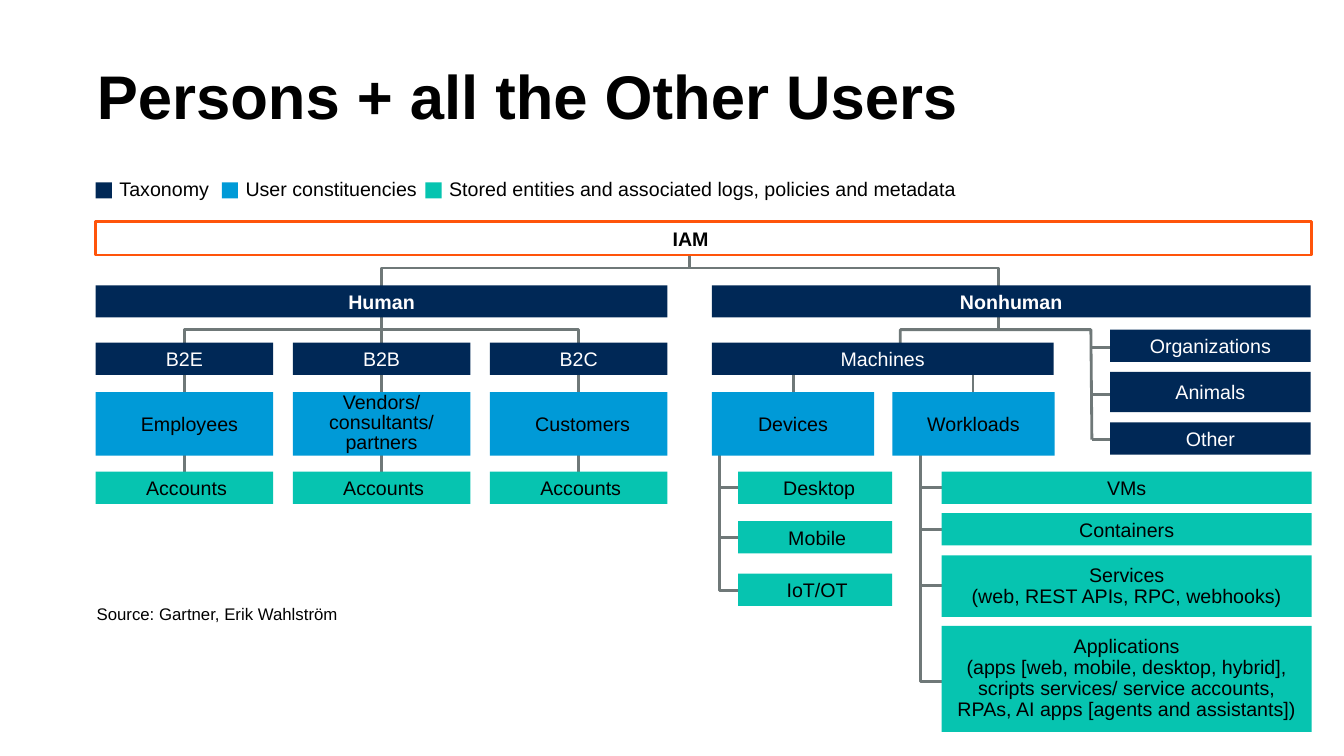
import pptx
import pptx.util
import pptx.dml.color
import pptx.enum.shapes
import pptx.enum.text
import pptx.oxml
from dataclasses import dataclass
from pptx.util import Inches


@dataclass(frozen=True)
class Theme:
    """Colours, font and type sizes of the slide."""
    taxonomy: str = "002856"
    constituency: str = "009AD7"
    stored: str = "06C4B0"
    frame: str = "FF540A"
    branch: str = "6F7878"
    dark_text: str = "000000"
    light_text: str = "FFFEFF"
    font: str = "Arial"
    title_size: int = 44
    label_size: int = 14
    source_size: int = 12
    line_width: int = 2


THEME = Theme()


def rgb(colour):
    """Turn a hex string into a colour."""
    return pptx.dml.color.RGBColor.from_string(colour)


def write(frame, words, size, colour=THEME.dark_text, bold=False, spacing=None, centred=False):
    """Write one formatted paragraph into a text frame."""
    paragraph = frame.paragraphs[0]
    paragraph.text = words
    align = pptx.enum.text.PP_ALIGN
    paragraph.alignment = align.CENTER if centred else align.LEFT
    if spacing:
        paragraph.line_spacing = spacing
    paragraph.font.name = THEME.font
    paragraph.font.size = pptx.util.Pt(size)
    paragraph.font.bold = bold
    paragraph.font.color.rgb = rgb(colour)


def style_line(line, colour):
    """Give a line its colour and the common width."""
    line.color.rgb = rgb(colour)
    line.width = pptx.util.Pt(THEME.line_width)


def add_title(slide, words):
    """Place and format the title placeholder."""
    title = slide.shapes.title
    title.left, title.top = Inches(0.86), Inches(0.26)
    title.width, title.height = Inches(10.6), Inches(1.45)
    frame = title.text_frame
    frame.auto_size = pptx.enum.text.MSO_AUTO_SIZE.NONE
    frame.vertical_anchor = pptx.enum.text.MSO_ANCHOR.MIDDLE
    write(frame, words, THEME.title_size, bold=True, spacing=0.9)


def add_block(slide, left, top, width, height, fill=None):
    """Add a plain rectangle, framed when it has no fill."""
    block = slide.shapes.add_shape(
        pptx.enum.shapes.MSO_SHAPE.RECTANGLE,
        Inches(left), Inches(top), Inches(width), Inches(height))
    block.shadow.inherit = False
    if fill:
        block.fill.solid()
        block.fill.fore_color.rgb = rgb(fill)
        block.line.fill.background()
    else:
        block.fill.background()
        style_line(block.line, THEME.frame)
    return block


def add_node(slide, words, left, top, width, height=0.32, fill=None,
             bold=False, spacing=None, nudge=0):
    """Add a labelled box, its label moved sideways by the nudge."""
    frame = add_block(slide, left, top, width, height, fill).text_frame
    frame.word_wrap = True
    frame.vertical_anchor = pptx.enum.text.MSO_ANCHOR.MIDDLE
    frame.margin_top = frame.margin_bottom = 0
    frame.margin_left = Inches(0.08 + max(2 * nudge, 0))
    frame.margin_right = Inches(0.08 + max(-2 * nudge, 0))
    colour = THEME.light_text if fill == THEME.taxonomy else THEME.dark_text
    write(frame, words, THEME.label_size, colour, bold, spacing, centred=True)


def add_text(slide, words, left, top, width, height, size, margin):
    """Add a single line of free text."""
    box = slide.shapes.add_textbox(Inches(left), Inches(top), Inches(width), Inches(height))
    frame = box.text_frame
    frame.word_wrap = False
    frame.margin_left = frame.margin_right = Inches(margin)
    frame.margin_top = frame.margin_bottom = Inches(margin / 2)
    write(frame, words, size)


def add_link(slide, x1, y1, x2, y2):
    """Add a straight branch line."""
    link = slide.shapes.add_connector(
        pptx.enum.shapes.MSO_CONNECTOR.STRAIGHT,
        Inches(x1), Inches(y1), Inches(x2), Inches(y2))
    style_line(link.line, THEME.branch)
    properties = link._element.spPr
    properties.append(pptx.oxml.parse_xml(
        '<a:effectLst xmlns:a="http://schemas.openxmlformats.org/drawingml/2006/main"/>'))


def add_bracket(slide, *points):
    """Add a bent branch line through the points."""
    corners = [(Inches(x), Inches(y)) for x, y in points]
    builder = slide.shapes.build_freeform(*corners[0])
    builder.add_line_segments(corners[1:], close=False)
    bracket = builder.convert_to_shape()
    bracket.shadow.inherit = False
    bracket.fill.background()
    style_line(bracket.line, THEME.branch)


def add_legend(slide):
    """Add the colour key."""
    for left, width, words, colour in (
            (0.95, 0.91, "Taxonomy", THEME.taxonomy),
            (2.2, 1.71, "User constituencies", THEME.constituency),
            (4.22, 5.07, "Stored entities and associated logs, policies and metadata",
             THEME.stored)):
        add_block(slide, left, 1.81, 0.16, 0.16, colour)
        add_text(slide, words, left + 0.235, 1.76, width, 0.22, THEME.label_size, 0)


def add_root(slide):
    """Add the top box and its two main branches."""
    add_bracket(slide, (9.9, 2.89), (9.9, 2.66), (3.78, 2.66), (3.78, 2.89))
    add_link(slide, 6.84, 2.53, 6.84, 2.66)
    add_node(slide, "IAM", 0.95, 2.2, 12.06, 0.33, bold=True, nudge=-0.13)


def add_human(slide):
    """Add the human branch with its three columns."""
    add_bracket(slide, (5.74, 3.49), (5.74, 3.27), (1.83, 3.27), (1.83, 3.49))
    add_link(slide, 3.78, 3.14, 3.78, 3.42)
    add_node(slide, "Human", 0.95, 2.83, 5.67, fill=THEME.taxonomy, bold=True)
    columns = (("B2E", "Employees", None, 0.05),
               ("B2B", "Vendors/\nconsultants/partners", 0.85, 0),
               ("B2C", "Customers", None, 0.04))
    width = 1.76
    for index, (group, people, spacing, nudge) in enumerate(columns):
        left = 0.95 + 1.955 * index
        centre = left + width / 2
        for start in (3.72, 4.4):
            add_link(slide, centre, start, centre, start + 0.33)
        add_node(slide, group, left, 3.4, width, fill=THEME.taxonomy)
        add_node(slide, people, left, 3.89, width, 0.63, THEME.constituency,
                 spacing=spacing, nudge=nudge)
        add_node(slide, "Accounts", left, 4.68, width, fill=THEME.stored, nudge=0.02)


def add_nonhuman(slide):
    """Add the nonhuman branch with machines and other kinds."""
    add_bracket(slide, (10.83, 4.36), (10.82, 3.27), (8.93, 3.27), (8.93, 3.49))
    add_link(slide, 9.9, 3.13, 9.9, 3.26)
    for centre in (7.87, 9.65):
        add_link(slide, centre, 3.72, centre, 4.05)
    add_node(slide, "Nonhuman", 7.06, 2.83, 5.94, fill=THEME.taxonomy, bold=True)
    add_node(slide, "Machines", 7.06, 3.4, 3.39, fill=THEME.taxonomy)
    for words, top, height, join in (("Organizations", 3.27, 0.32, 3.45),
                                     ("Animals", 3.69, 0.4, 3.91),
                                     ("Other", 4.19, 0.32, 4.36)):
        add_link(slide, 10.83, join, 11.03, join)
        add_node(slide, words, 11.01, top, 1.99, height, THEME.taxonomy)


def add_machine(slide, words, left, trunk, items_left, items_width, items):
    """Add a machine kind and the stored entities hanging from it."""
    *upper, last = [item[3] for item in items]
    add_bracket(slide, (trunk, 4.39), (trunk, last), (trunk + 0.5, last))
    for join in upper:
        add_link(slide, trunk, join, trunk + 0.5, join)
    add_node(slide, words, left, 3.89, 1.61, 0.63, THEME.constituency)
    for entity, top, height, _, spacing, nudge in items:
        add_node(slide, entity, items_left, top, items_width, height, THEME.stored,
                 spacing=spacing, nudge=nudge)


def main():
    """Build the slide and save it."""
    deck = pptx.Presentation()
    deck.slide_width, deck.slide_height = Inches(13.33), Inches(7.5)
    slide = deck.slides.add_slide(deck.slide_layouts[5])
    add_title(slide, "Persons + all the Other Users")
    add_legend(slide)
    add_root(slide)
    add_human(slide)
    add_nonhuman(slide)
    add_machine(slide, "Devices", 7.06, 7.14, 7.32, 1.53, (
        ("Desktop", 4.68, 0.32, 4.84, None, 0.04),
        ("Mobile", 5.17, 0.32, 5.33, None, 0.02),
        ("IoT/OT", 5.69, 0.32, 5.86, None, 0.02)))
    tight = pptx.util.Pt(15)
    add_machine(slide, "Workloads", 8.85, 9.13, 9.34, 3.67, (
        ("VMs", 4.68, 0.32, 4.84, None, 0),
        ("Containers", 5.09, 0.32, 5.25, None, 0),
        ("Services\n(web, REST APIs, RPC, webhooks)", 5.51, 0.61, 5.81, tight, 0),
        ("Applications\n(apps [web, mobile, desktop, hybrid], scripts services/ service "
         "accounts,\nRPAs, AI apps [agents and assistants])", 6.21, 1.05, 6.76, tight, 0)))
    add_text(slide, "Source: Gartner, Erik Wahlström", 0.86, 5.94, 2.62, 0.3,
             THEME.source_size, 0.1)
    deck.save("out.pptx")


if __name__ == "__main__":
    main()
